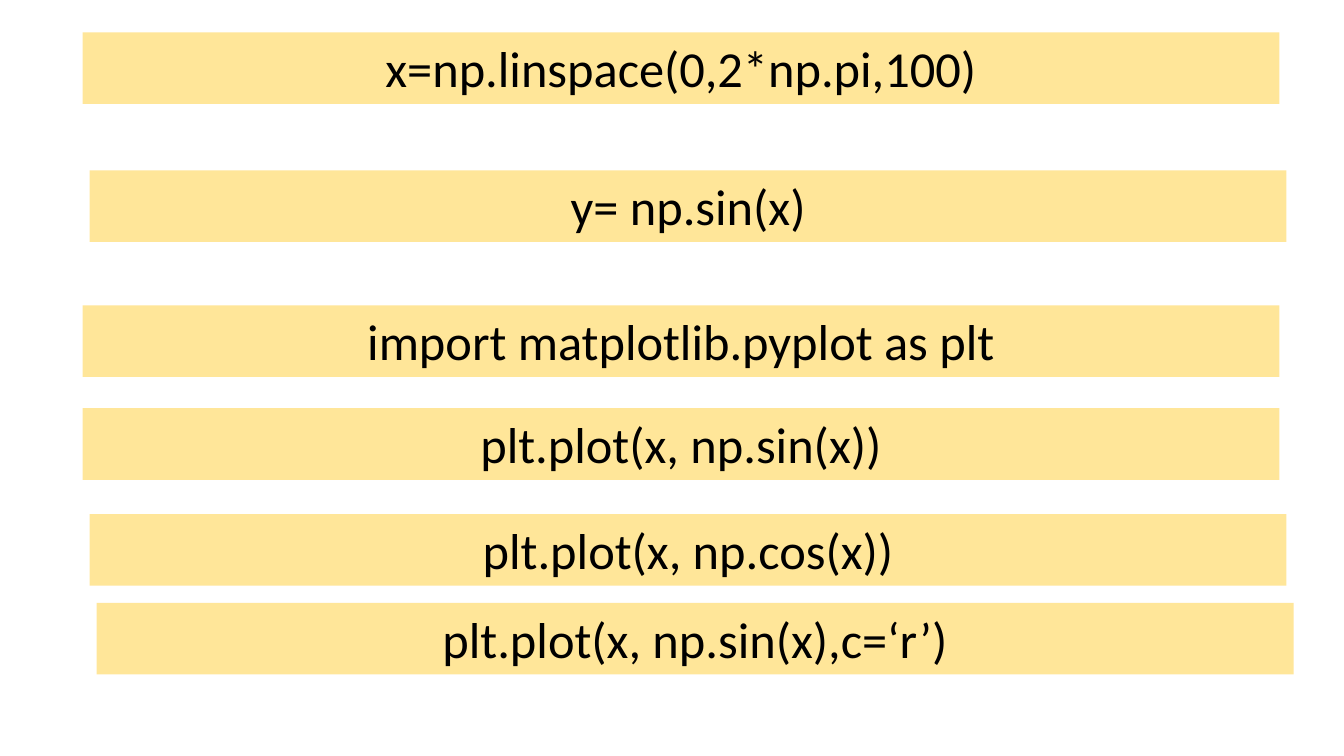
import dataclasses

import pptx
import pptx.dml.color
import pptx.enum.text
import pptx.util
from pptx.util import Inches


@dataclasses.dataclass(frozen=True)
class Theme:
    font: str = "Calibri"
    code_size: int = 36
    ink: str = "000000"
    band: str = "FFE699"


THEME = Theme()
BAND_LEFT, BAND_WIDTH, BAND_HEIGHT = 0.82, 11.87, 0.71
INDENT_STEP = 0.07

# Each line of code: indent steps, top in inches, text
CODE_LINES = [
    (0, 0.32, "x=np.linspace(0,2*np.pi,100)"),
    (1, 1.69, "y= np.sin(x)"),
    (0, 3.03, "import matplotlib.pyplot as plt"),
    (0, 4.05, "plt.plot(x, np.sin(x))"),
    (1, 5.1, "plt.plot(x, np.cos(x))"),
    (2, 5.98, "plt.plot(x, np.sin(x),c=‘r’)"),
]


def rgb(value):
    return pptx.dml.color.RGBColor.from_string(value)


def write_text(frame, text, *, size, color, align):
    para = frame.paragraphs[0]
    para.alignment = align
    span = para.add_run()
    span.text = text
    span.font.name = THEME.font
    span.font.size = pptx.util.Pt(size)
    span.font.color.rgb = rgb(color)


def add_code_band(page, box, text):
    """Place one filled line of code in box (left, top, width, height in inches)."""
    band = page.shapes.add_textbox(*map(Inches, box))
    band.fill.solid()
    band.fill.fore_color.rgb = rgb(THEME.band)
    frame = band.text_frame
    frame.word_wrap = True
    frame.auto_size = pptx.enum.text.MSO_AUTO_SIZE.SHAPE_TO_FIT_TEXT
    write_text(frame, text, size=THEME.code_size, color=THEME.ink,
               align=pptx.enum.text.PP_ALIGN.CENTER)


def build_code_slide(deck):
    page = deck.slides.add_slide(deck.slide_layouts.get_by_name("Blank"))
    for indent, top, text in CODE_LINES:
        left = BAND_LEFT + indent * INDENT_STEP
        add_code_band(page, (left, top, BAND_WIDTH, BAND_HEIGHT), text)


def main():
    deck = pptx.Presentation()
    deck.slide_width, deck.slide_height = Inches(13.33), Inches(7.5)
    build_code_slide(deck)
    deck.save("out.pptx")


if __name__ == "__main__":
    main()
